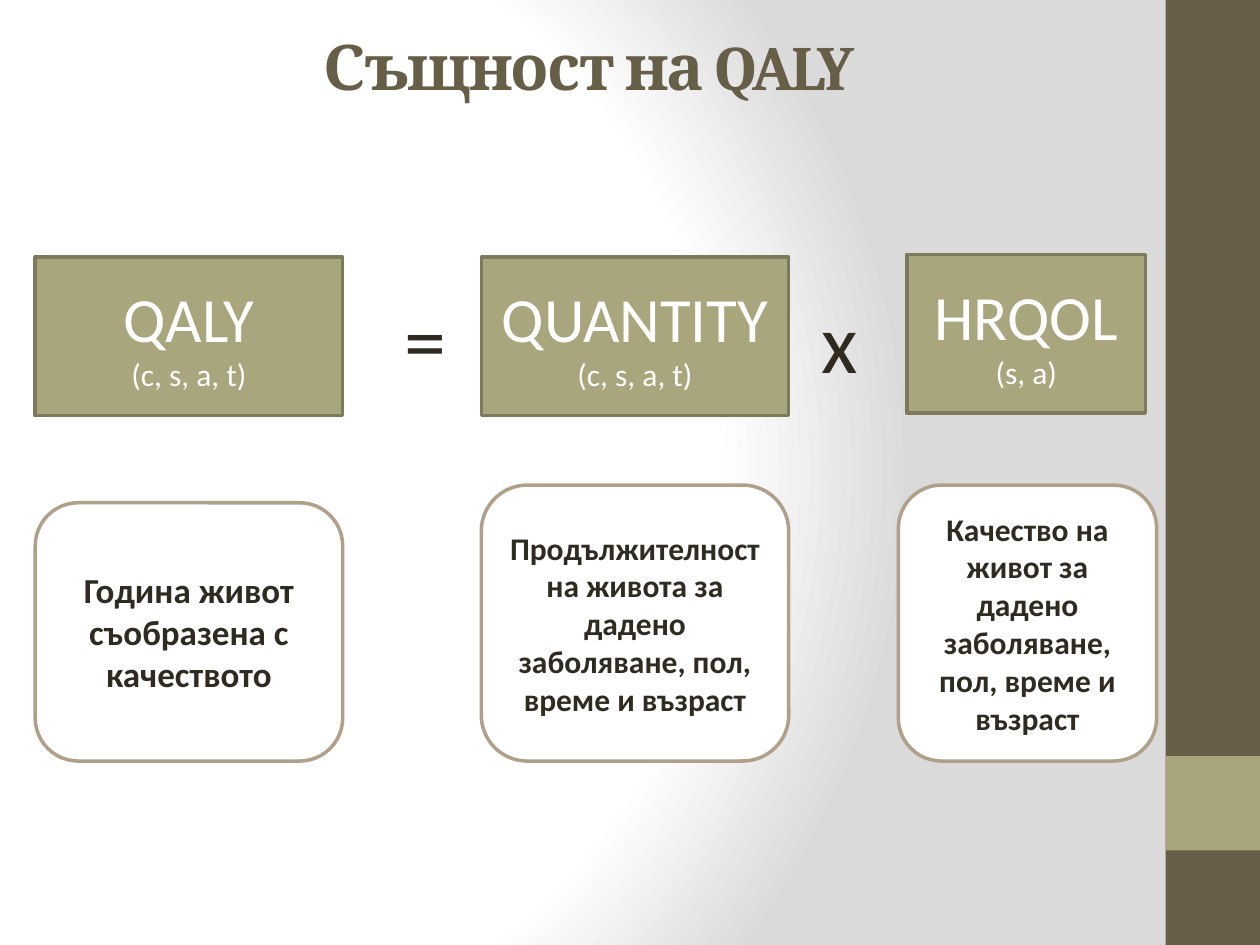
from typing import NamedTuple

from lxml.etree import fromstring
from pptx import Presentation
from pptx.dml.color import RGBColor
from pptx.enum.shapes import MSO_SHAPE as Shape
from pptx.enum.text import MSO_ANCHOR as Anchor, MSO_AUTO_SIZE as AutoSize, PP_ALIGN as Align
from pptx.util import Pt

PX = 9144  # EMU per px, 100 px to the inch
COLORS = {
    "white": "FFFFFF",
    "grey": "DADADA",
    "brown": "675E47",
    "olive": "A9A57C",
    "olive_edge": "7D7A5C",
    "tan_edge": "B1A089",
    "ink": "2F2B20",
}


class Box(NamedTuple):
    left: int
    top: int
    width: int
    height: int

    def emu(self) -> list[int]:
        return [value * PX for value in self]


class Term(NamedTuple):
    name: str
    arguments: str
    box: Box
    meaning: str
    meaning_box: Box
    meaning_size: int


TERMS = [
    Term("QALY", "(c, s, a, t)", Box(28, 204, 244, 126),
         "Година живот съобразена с качеството", Box(28, 399, 244, 205), 20),
    Term("QUANTITY", "(c, s, a, t)", Box(382, 204, 244, 126),
         "Продължителност на живота за дадено заболяване, пол, време и възраст",
         Box(382, 385, 244, 219), 18),
    Term("HRQOL", "(s, a)", Box(720, 202, 189, 126),
         "Качество на живот за дадено заболяване, пол, време и възраст",
         Box(713, 385, 205, 219), 18),
]
OPERATORS = {"=": Box(311, 223, 71, 91), "x": Box(642, 225, 71, 91)}


def color(name: str) -> RGBColor:
    return RGBColor.from_string(COLORS[name])


def write(paragraph, text: str, *, size: int, ink: str, font: str = "Calibri",
          bold: bool = False, align=Align.CENTER):
    paragraph.alignment = align
    run = paragraph.add_run()
    run.text = text
    run.font.name = font
    run.font.size = Pt(size)
    run.font.bold = bold
    run.font.color.rgb = color(ink)
    return run


def add_block(slide, box: Box, fill: str, edge: str | None = None, kind=Shape.RECTANGLE):
    shape = slide.shapes.add_shape(kind, *box.emu())
    shape.shadow.inherit = False
    shape.fill.solid()
    shape.fill.fore_color.rgb = color(fill)
    if edge:
        shape.line.color.rgb = color(edge)
        shape.line.width = Pt(2)
    else:
        shape.line.fill.background()
    shape.text_frame.word_wrap = True
    shape.text_frame.vertical_anchor = Anchor.MIDDLE
    return shape


def set_background(slide) -> None:
    stops = "".join(
        f'<a:gs pos="{percent * 1000}"><a:srgbClr val="{COLORS[name]}"/></a:gs>'
        for percent, name in [(0, "white"), (75, "white"), (100, "grey")])
    background = fromstring(
        '<p:bg xmlns:p="http://schemas.openxmlformats.org/presentationml/2006/main" '
        'xmlns:a="http://schemas.openxmlformats.org/drawingml/2006/main">'
        f'<p:bgPr><a:gradFill rotWithShape="1"><a:gsLst>{stops}</a:gsLst>'
        '<a:path path="circle"><a:fillToRect l="20000" t="50000" r="100000" b="50000"/></a:path>'
        '</a:gradFill><a:effectLst/></p:bgPr></p:bg>')
    slide.element.cSld.insert(0, background)


def add_title(slide, text: str, box: Box) -> None:
    title = slide.shapes.title
    title.left, title.top, title.width, title.height = box.emu()
    frame = title.text_frame
    frame.auto_size = AutoSize.NONE
    frame.vertical_anchor = Anchor.MIDDLE
    run = write(frame.paragraphs[0], text, size=36, ink="brown", font="Cambria", bold=True)
    run.font._element.set("spc", "-100")


def add_term(slide, term: Term) -> None:
    frame = add_block(slide, term.box, "olive", "olive_edge").text_frame
    write(frame.paragraphs[0], term.name, size=36, ink="white")
    write(frame.add_paragraph(), term.arguments, size=18, ink="white")
    meaning = add_block(slide, term.meaning_box, "white", "tan_edge", Shape.ROUNDED_RECTANGLE)
    write(meaning.text_frame.paragraphs[0], term.meaning,
          size=term.meaning_size, ink="ink", bold=True)


def add_operator(slide, symbol: str, box: Box) -> None:
    frame = slide.shapes.add_textbox(*box.emu()).text_frame
    frame.word_wrap = True
    frame.auto_size = AutoSize.SHAPE_TO_FIT_TEXT
    write(frame.paragraphs[0], symbol, size=48, ink="ink", align=Align.LEFT)


def main() -> None:
    presentation = Presentation()
    presentation.slide_width, presentation.slide_height = 1000 * PX, 750 * PX
    slide = presentation.slides.add_slide(presentation.slide_layouts[5])

    # Background and side band
    set_background(slide)
    add_block(slide, Box(925, 0, 75, 750), "brown")
    add_block(slide, Box(925, 600, 75, 75), "olive")

    # Title and equation
    add_title(slide, "Същност на QALY", Box(51, 21, 833, 61))
    for term in TERMS:
        add_term(slide, term)
    for symbol, box in OPERATORS.items():
        add_operator(slide, symbol, box)

    presentation.save("out.pptx")


if __name__ == "__main__":
    main()
